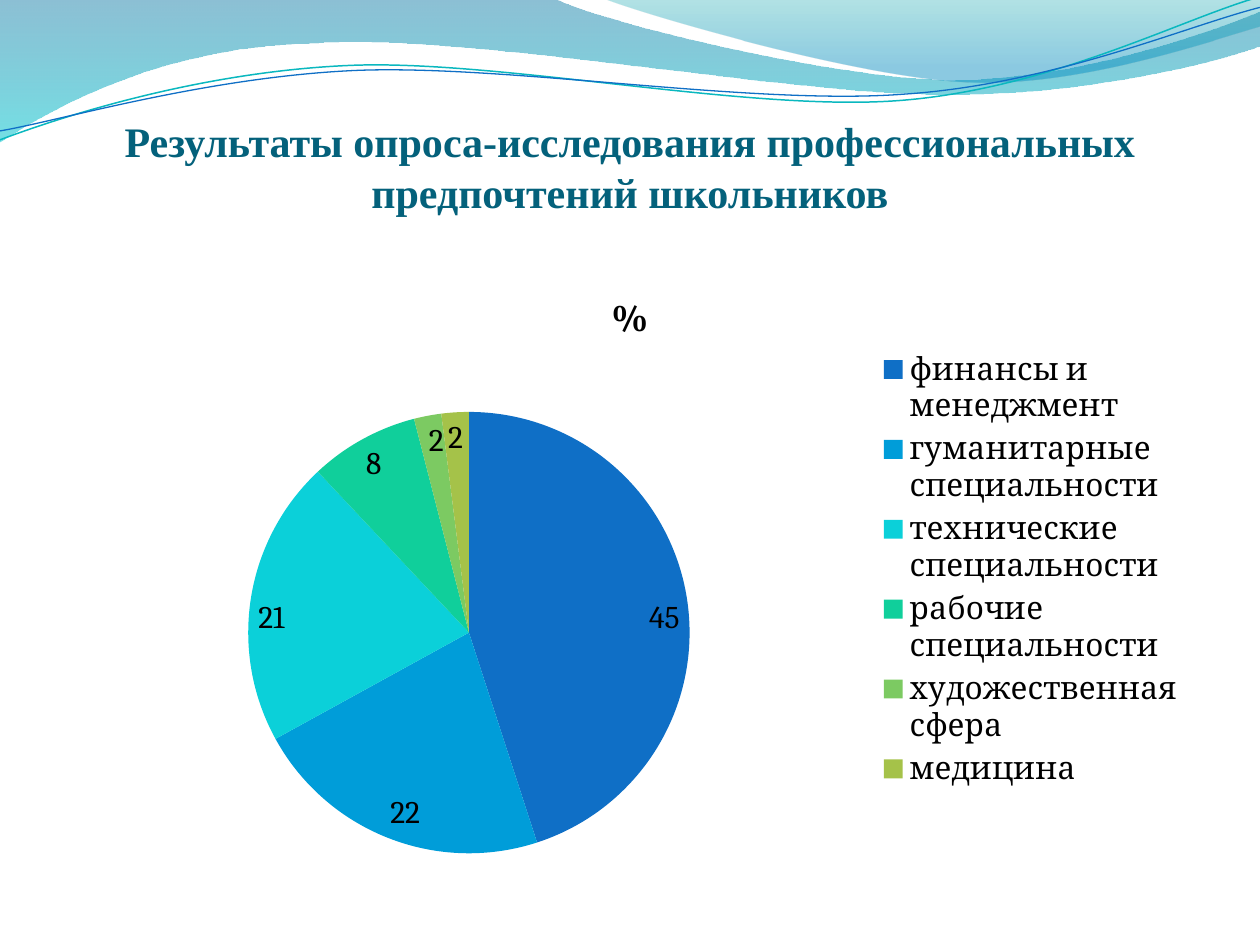
from lxml import etree
from pptx import Presentation
from pptx.chart.data import CategoryChartData
from pptx.dml.color import RGBColor
from pptx.enum.chart import XL_CHART_TYPE, XL_LABEL_POSITION, XL_LEGEND_POSITION
from pptx.enum.text import MSO_ANCHOR, PP_ALIGN
from pptx.oxml import parse_xml
from pptx.util import Cm, Pt

PIE = XL_CHART_TYPE.PIE
RIGHT = XL_LEGEND_POSITION.RIGHT
INSIDE = XL_LABEL_POSITION.INSIDE_END
BOTTOM = MSO_ANCHOR.BOTTOM
CENTER = PP_ALIGN.CENTER
A = "{http://schemas.openxmlformats.org/drawingml/2006/main}"
C = "{http://schemas.openxmlformats.org/drawingml/2006/chart}"

prs = Presentation()
prs.slide_width, prs.slide_height = Cm(25.4), Cm(19.05)
slide = prs.slides.add_slide(prs.slide_layouts[6])


def color(text):
    return RGBColor.from_string(text)


def add_wave(start, parts, closed):
    """Draw lines (2 numbers) and Bezier curves (6 numbers), all in cm."""
    pen = slide.shapes.build_freeform(Cm(start[0]), Cm(start[1]))
    pen.add_line_segments([(Cm(p[-2]), Cm(p[-1])) for p in parts], close=closed)
    shape = pen.convert_to_shape()
    shape.shadow.inherit = False
    lines = list(shape._element.iter(A + "lnTo"))
    for line, part in zip(lines, parts):
        if len(part) == 6:
            curve = etree.Element(A + "cubicBezTo")
            for x, y in zip(part[::2], part[1::2]):
                etree.SubElement(curve, A + "pt", x=str(Cm(x) - shape.left),
                                 y=str(Cm(y) - shape.top))
            line.getparent().replace(line, curve)
    return shape


# Translucent bands: start, parts, gradient stops (place, colour, opacity)
bands = [
    ((0, 0),
     [(11.18, -0.03), (12.09, 0.43, 16.87, 1.6, 19.25, 1.6),
      (21.67, 1.6, 24.33, 0.66, 25.4, 0.23), (25.43, 0.91),
      (24.97, 1.12, 22.1, 1.93, 18.95, 1.9),
      (15.8, 1.9, 9.7, 0.71, 6.53, 0.86),
      (3.28, 0.91, 1.17, 2.11, -0.03, 2.87)],
     [(0, "0074A1", 45), (100, "00C6CF", 55)]),
    ((12.17, -0.03),
     [(12.93, 0.28, 17.32, 1.57, 19.53, 1.65),
      (21.74, 1.75, 24.41, 0.81, 25.4, 0.53), (25.4, 0)],
     [(0, "00A1A9", 30), (80, "008BBF", 45)]),
]
for start, parts, stops in bands:
    band = add_wave(start, parts, True)
    band.line.fill.background()
    grad = parse_xml(f'<a:gradFill xmlns:a="{A[1:-1]}"><a:gsLst/>'
                     '<a:lin ang="5400000" scaled="0"/></a:gradFill>')
    for place, tint, alpha in stops:
        stop = etree.SubElement(grad[0], A + "gs", pos=str(place * 1000))
        rgb = etree.SubElement(stop, A + "srgbClr", val=tint)
        etree.SubElement(rgb, A + "alpha", val=str(alpha * 1000))
    band._element.spPr.find(A + "custGeom").addnext(grad)

# Thin wavy lines
waves = [
    ((0, 2.82),
     [(1.22, 2.36, 4.01, 1.45, 7.04, 1.32),
      (10.03, 1.19, 15.06, 2.26, 18.11, 2.03),
      (21.16, 1.8, 23.83, 0.38, 25.35, -0.05)], "0AB8BF", 0.85),
    ((0, 2.64),
     [(1.19, 2.44, 4.17, 1.55, 7.19, 1.42),
      (10.24, 1.3, 15.16, 2.13, 18.21, 1.9),
      (21.23, 1.7, 23.9, 0.53, 25.4, 0.15)], "0F6FC6", 0.75),
]
for start, parts, tint, width in waves:
    wave = add_wave(start, parts, False)
    wave.fill.background()
    wave.line.color.rgb = color(tint)
    wave.line.width = Pt(width)

# Title
box = slide.shapes.add_textbox(Cm(1.27), Cm(1.19), Cm(22.86), Cm(3.18))
frame = box.text_frame
frame.word_wrap = True
frame.vertical_anchor = BOTTOM
frame.margin_left = frame.margin_right = frame.margin_bottom = 0
frame.text = "Результаты опроса-исследования профессиональных предпочтений школьников"
para = frame.paragraphs[0]
para.alignment = CENTER
font = para.runs[0].font
font.name, font.size, font.bold = "Times New Roman", Pt(24), True
font.color.rgb = color("04617B")

# Survey chart
slices = [
    ("финансы и менеджмент", 45, "0F6FC6"),
    ("гуманитарные специальности", 22, "009DD9"),
    ("технические специальности", 21, "0BD0D9"),
    ("рабочие специальности", 8, "10CF9B"),
    ("художественная сфера", 2, "7CCA62"),
    ("медицина", 2, "A5C249"),
]
data = CategoryChartData()
data.categories = [name for name, _, _ in slices]
data.add_series("%", [value for _, value, _ in slices])
chart = slide.shapes.add_chart(
    PIE, Cm(1.27), Cm(5.38), Cm(22.86), Cm(12.19), data).chart
chart.font.name, chart.font.size = "Cambria", Pt(18)
chart.font.color.rgb = color("000000")

chart.has_title = True
head = chart.chart_title.text_frame
head.text = "%"
font = head.paragraphs[0].runs[0].font
font.name, font.size, font.bold = "Cambria", Pt(21.6), True
font.color.rgb = color("000000")

chart.has_legend = True
chart.legend.position = RIGHT
chart.legend.include_in_layout = False

plot = chart.plots[0]
plot.vary_by_categories = True
plot.has_data_labels = True
plot.data_labels.show_value = True
plot.data_labels.position = INSIDE
for index, (_, _, tint) in enumerate(slices):
    fill = plot.series[0].points[index].format.fill
    fill.solid()
    fill.fore_color.rgb = color(tint)

# Place of the pie, as shares of the chart
area = chart._chartSpace.chart.plotArea
for old in area.findall(C + "layout"):
    area.remove(old)
layout = etree.Element(C + "layout")
area.insert(0, layout)
manual = etree.SubElement(layout, C + "manualLayout")
for tag, value in [("layoutTarget", "inner"), ("xMode", "edge"),
                   ("yMode", "edge"), ("x", "0.163"), ("y", "0.24"),
                   ("w", "0.39"), ("h", "0.73")]:
    etree.SubElement(manual, C + tag, val=value)

prs.save("out.pptx")
